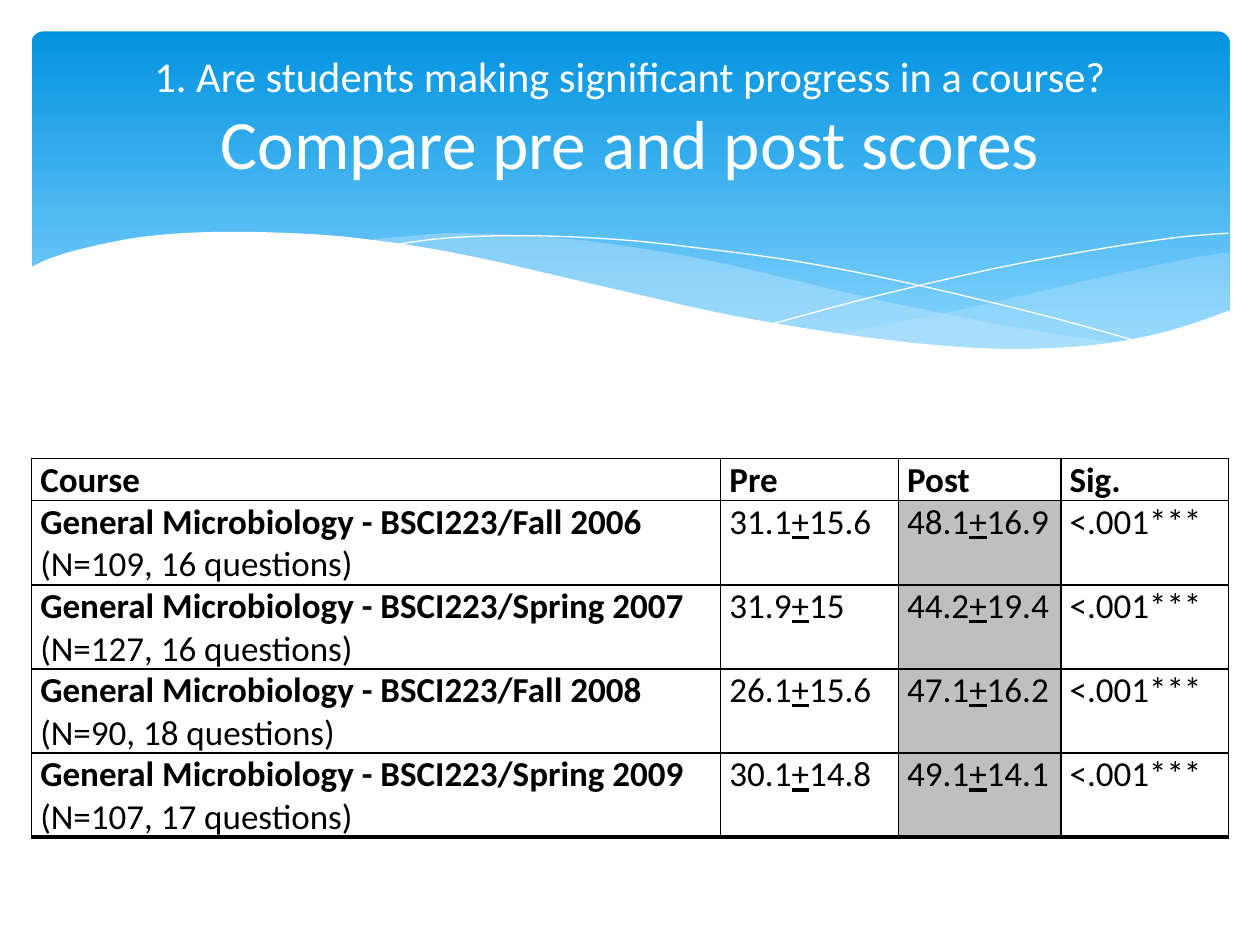
from lxml import etree
from pptx import Presentation
from pptx.dml.color import RGBColor
from pptx.enum.shapes import MSO_SHAPE
from pptx.enum.text import MSO_ANCHOR, PP_ALIGN
from pptx.oxml.ns import qn
from pptx.util import Inches, Pt

ROUNDED = MSO_SHAPE.ROUNDED_RECTANGLE
MIDDLE = MSO_ANCHOR.MIDDLE
CENTER = PP_ALIGN.CENTER

FONT = "Calibri"
WHITE = RGBColor(0xFF, 0xFF, 0xFF)
BLACK = RGBColor(0x00, 0x00, 0x00)
GRAY = RGBColor(0xBF, 0xBF, 0xBF)
BLUE = RGBColor(0x02, 0x93, 0xE0)
SKY = RGBColor(0x83, 0xD3, 0xFE)
PALE = RGBColor(0xC6, 0xE7, 0xFC)

TITLE = [
    ("1. Are students making significant progress in a course?", 24.3),
    ("Compare pre and post scores", 39.6),
]
HEADERS = ["Course", "Pre", "Post", "Sig."]
COURSES = [
    ("Fall 2006", 109, 16, "31.1+15.6", "48.1+16.9"),
    ("Spring 2007", 127, 16, "31.9+15", "44.2+19.4"),
    ("Fall 2008", 90, 18, "26.1+15.6", "47.1+16.2"),
    ("Spring 2009", 107, 17, "30.1+14.8", "49.1+14.1"),
]
SIGNIFICANCE = "<.001***"
COLUMN_WIDTHS = [5.47, 1.41, 1.29, 1.33]
HEADER_HEIGHT, COURSE_HEIGHT = 0.32, 0.64
POST_COLUMN = 2

# Each outline is a list of smooth curves, joined by straight lines.
RIGHT_BAND = [
    [(9.76, 2), (9.35, 2.07), (8.61, 2.23), (7.79, 2.42), (7.06, 2.57), (6.61, 2.65)],
    [(6.61, 2.65), (7.05, 2.71), (7.57, 2.76), (8.03, 2.78), (8.54, 2.76),
     (8.97, 2.7), (9.35, 2.62), (9.76, 2.47)],
]
LONG_BAND = [
    [(8.93, 2.73), (8.07, 2.6), (7.06, 2.4), (6.29, 2.22), (5.69, 2.08), (5.14, 1.98),
     (4.65, 1.91), (4.2, 1.87), (3.61, 1.85), (3.28, 1.87), (2.86, 1.91)],
    [(2.86, 1.91), (3.42, 1.99), (4.04, 2.11), (4.91, 2.32), (5.66, 2.48), (6.34, 2.61),
     (6.95, 2.7), (7.48, 2.76), (8.07, 2.78), (8.57, 2.77), (8.93, 2.73)],
]
FALLING_LINE = [
    [(3.09, 1.95), (3.53, 1.89), (4.16, 1.87), (4.89, 1.9), (5.56, 1.97), (6.36, 2.08),
     (7.27, 2.26), (8.31, 2.51), (9.07, 2.72)],
]
RISING_LINE = [
    [(6.13, 2.57), (6.95, 2.35), (7.76, 2.16), (8.36, 2.04), (8.95, 1.94), (9.38, 1.88),
     (9.75, 1.85)],
]
WHITE_WAVE = [
    [(9.77, 2.46), (9.3, 2.62), (8.75, 2.73), (8.09, 2.77), (7.44, 2.74), (6.68, 2.65),
     (5.79, 2.5), (5.03, 2.33), (4.47, 2.2), (3.91, 2.07), (3.4, 1.97), (2.92, 1.9),
     (2.5, 1.86), (1.93, 1.84), (1.46, 1.85), (1.06, 1.89), (0.67, 1.97), (0.4, 2.05),
     (0.23, 2.13)],
    [(0.23, 3.29), (9.77, 3.29)],
]


def smooth(points, steps=6):
    """Catmull-Rom spline through the points."""
    padded = [points[0], *points, points[-1]]
    curve = [points[0]]
    for a, b, c, d in zip(padded, padded[1:], padded[2:], padded[3:]):
        for step in range(1, steps + 1):
            t = step / steps
            curve.append(tuple(
                (2 * q + (r - p) * t + (2 * p - 5 * q + 4 * r - s) * t**2
                 + (3 * q - p - 3 * r + s) * t**3) / 2
                for p, q, r, s in zip(a, b, c, d)))
    return curve


def add_outline(slide, curves, fill=None, alpha=100):
    """Filled area, or an open white hairline when there is no fill."""
    points = [(Inches(x), Inches(y)) for curve in curves for x, y in smooth(curve)]
    builder = slide.shapes.build_freeform(*points[0], scale=1.0)
    builder.add_line_segments(points[1:], close=fill is not None)
    shape = builder.convert_to_shape()
    shape.shadow.inherit = False
    if fill is None:
        shape.fill.background()
        shape.line.color.rgb = WHITE
        shape.line.width = Pt(0)
        return
    shape.fill.solid()
    shape.fill.fore_color.rgb = fill
    shape.line.fill.background()
    if alpha < 100:
        color = shape.fill._xPr.find(".//" + qn("a:srgbClr"))
        etree.SubElement(color, qn("a:alpha"), val=str(alpha * 1000))


def add_banner(slide):
    banner = slide.shapes.add_shape(
        ROUNDED, Inches(0.25), Inches(0.25), Inches(9.51), Inches(2.7))
    banner.adjustments[0] = 0.034
    banner.shadow.inherit = False
    banner.line.fill.background()
    banner.fill.gradient()
    banner.fill.gradient_angle = 270
    for stop, color, position in zip(banner.fill.gradient_stops, (BLUE, SKY), (0, 0.9)):
        stop.color.rgb = color
        stop.position = position


def format_run(run, size, color, bold=False):
    run.font.name = FONT
    run.font.size = Pt(size)
    run.font.color.rgb = color
    run.font.bold = bold


def add_title(slide):
    title = slide.shapes.add_textbox(Inches(0.5), Inches(0.3), Inches(9), Inches(1.25))
    title.text_frame.word_wrap = True
    title.text_frame.vertical_anchor = MIDDLE
    paragraph = title.text_frame.paragraphs[0]
    paragraph.text = "\n".join(text for text, _ in TITLE)
    paragraph.alignment = CENTER
    for run, (_, size) in zip(paragraph.runs, TITLE):
        format_run(run, size, WHITE)


def set_borders(cell, bottom_width):
    properties = cell._tc.get_or_add_tcPr()
    widths = {"a:lnL": 1, "a:lnR": 1, "a:lnT": 1, "a:lnB": bottom_width}
    for index, (tag, width) in enumerate(widths.items()):
        line = etree.Element(qn(tag), w=str(Pt(width)))
        fill = etree.SubElement(line, qn("a:solidFill"))
        etree.SubElement(fill, qn("a:srgbClr"), val=str(BLACK))
        properties.insert(index, line)


def fill_cell(cell, text, bold_first, fill, bottom_width):
    """The first paragraph may be bold; a plus sign is underlined."""
    cell.margin_left = cell.margin_right = Inches(0.07)
    cell.margin_top = cell.margin_bottom = 0
    cell.fill.solid()
    cell.fill.fore_color.rgb = fill
    set_borders(cell, bottom_width)
    cell.text_frame.text = text
    for index, paragraph in enumerate(cell.text_frame.paragraphs):
        parts = paragraph.text.partition("+")
        paragraph.text = parts[0]
        for part in filter(None, parts[1:]):
            paragraph.add_run().text = part
        for run in paragraph.runs:
            format_run(run, 20, BLACK, bold_first and index == 0)
            run.font.underline = run.text == "+"


def add_scores(slide):
    rows = [HEADERS] + [
        (f"General Microbiology - BSCI223/{term}\n(N={count}, {questions} questions)",
         pre, post, SIGNIFICANCE)
        for term, count, questions, pre, post in COURSES]
    heights = [HEADER_HEIGHT] + [COURSE_HEIGHT] * len(COURSES)
    table = slide.shapes.add_table(
        len(rows), len(HEADERS), Inches(0.25), Inches(3.64),
        Inches(sum(COLUMN_WIDTHS)), Inches(sum(heights))).table
    table.first_row = table.horz_banding = False
    for column, width in zip(table.columns, COLUMN_WIDTHS):
        column.width = Inches(width)
    for r, (row, height) in enumerate(zip(rows, heights)):
        table.rows[r].height = Inches(height)
        bottom_width = 2.25 if r == len(rows) - 1 else 1
        for c, text in enumerate(row):
            fill = GRAY if r > 0 and c == POST_COLUMN else WHITE
            fill_cell(table.cell(r, c), text, r == 0 or c == 0, fill, bottom_width)


def main():
    presentation = Presentation()
    presentation.slide_width = Inches(10)
    presentation.slide_height = Inches(7.5)
    slide = presentation.slides.add_slide(presentation.slide_layouts[6])
    add_banner(slide)
    add_outline(slide, RIGHT_BAND, PALE, 29)
    add_outline(slide, LONG_BAND, PALE, 40)
    add_outline(slide, FALLING_LINE)
    add_outline(slide, RISING_LINE)
    add_outline(slide, WHITE_WAVE, WHITE)
    add_title(slide)
    add_scores(slide)
    presentation.save("out.pptx")


if __name__ == "__main__":
    main()
